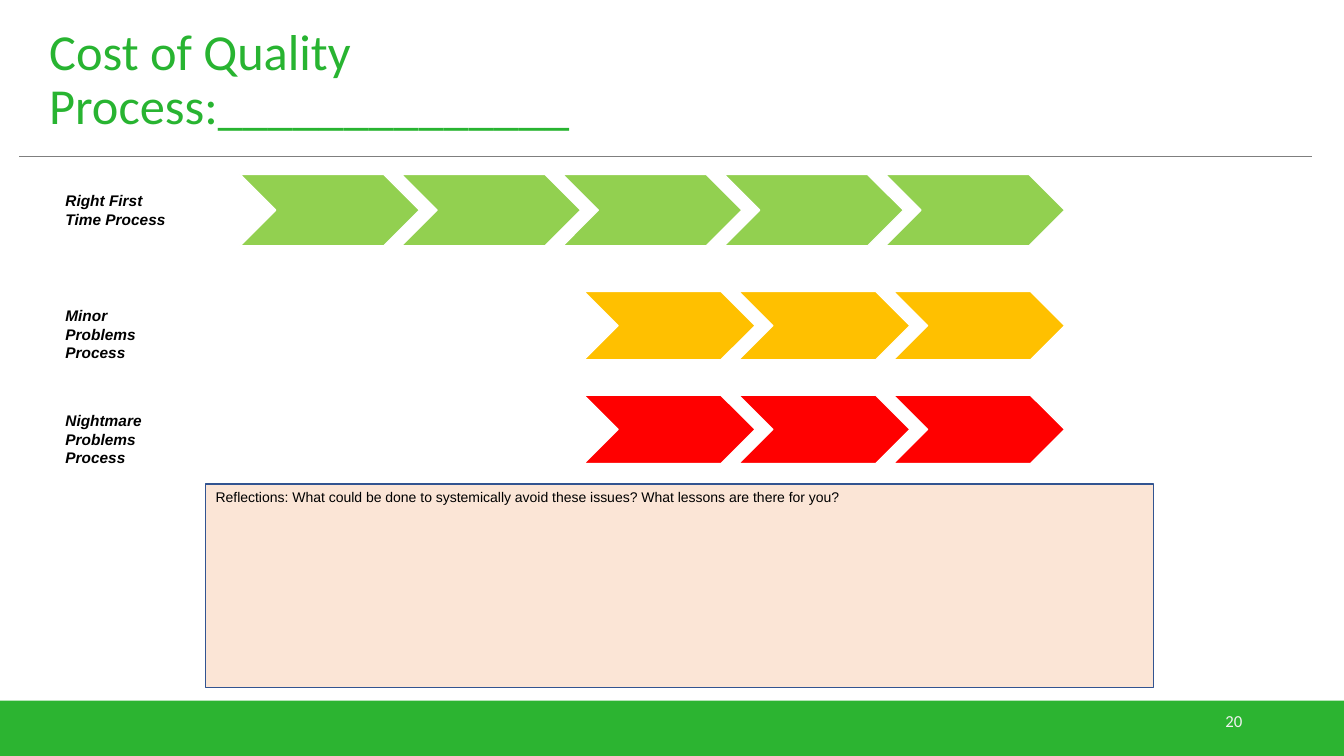
from dataclasses import dataclass
from pptx import Presentation
from pptx.dml.color import RGBColor as Rgb
from pptx.enum.shapes import MSO_CONNECTOR as Link, MSO_SHAPE as Kind
from pptx.enum.text import MSO_ANCHOR as Anchor, PP_ALIGN as Align
from pptx.oxml.ns import qn
from pptx.util import Inches, Pt
from lxml import etree


@dataclass(frozen=True)
class Theme:
    # Colours
    brand: str = "28B431"
    band: str = "2CB431"
    rule: str = "7F7F7F"
    good: str = "92D050"
    minor: str = "FFC000"
    bad: str = "FF0000"
    peach: str = "FBE5D6"
    navy: str = "325491"
    white: str = "FFFFFF"
    pale: str = "F2F2F2"
    black: str = "000000"
    # Fonts and sizes
    head: str = "Calibri"
    body: str = "Arial"
    title: int = 36
    page: int = 12
    label: int = 11
    note: int = 10


class Board:
    def __init__(self, slide, theme):
        self.slide = slide
        self.theme = theme

    def fill_text(self, frame, text, size, color, font, bold=False,
                  align=Align.LEFT, anchor=Anchor.TOP, lead=None):
        frame.word_wrap = True
        frame.vertical_anchor = anchor
        frame.text = text
        for para in frame.paragraphs:
            para.alignment = align
            para.line_spacing = lead
            for run in para.runs:
                face = run.font
                face.name, face.size = font, Pt(size)
                face.bold = face.italic = bold
                face.color.rgb = Rgb.from_string(color)

    def text(self, area, *args, **style):
        box = self.slide.shapes.add_textbox(*map(Inches, area))
        self.fill_text(box.text_frame, *args, **style)

    def shape(self, kind, area, fill, line=None):
        item = self.slide.shapes.add_shape(kind, *map(Inches, area))
        item.shadow.inherit = False
        item.fill.solid()
        item.fill.fore_color.rgb = Rgb.from_string(fill)
        if line:
            item.line.color.rgb = Rgb.from_string(line)
            item.line.width = Pt(1)
        else:
            item.line.fill.background()
        return item

    def rule(self, left, right, top):
        line = self.slide.shapes.add_connector(
            Link.STRAIGHT, *map(Inches, (left, top, right, top)))
        line.line.color.rgb = Rgb.from_string(self.theme.rule)
        line.line.width = Pt(0.75)
        etree.SubElement(line._element.spPr, qn("a:effectLst"))

    def chain(self, count, left, right, top, wide, high, fill):
        step = (right - left - wide) / (count - 1)
        for i in range(count):
            self.shape(Kind.CHEVRON, (left + i * step, top, wide, high),
                       fill, self.theme.white)


def main():
    deck = Presentation()
    deck.slide_width, deck.slide_height = Inches(13.33), Inches(7.5)
    theme = Theme()
    board = Board(deck.slides.add_slide(deck.slide_layouts[6]), theme)

    # Footer band, title and page number
    board.shape(Kind.RECTANGLE, (0, 6.95, 13.33, 0.55), theme.band)
    board.rule(0.19, 13.01, 1.55)
    board.text((0.39, 0.08, 11.5, 1.45),
               "Cost of Quality\vProcess:______________",
               theme.title, theme.brand, theme.head,
               anchor=Anchor.MIDDLE, lead=0.9)
    board.text((9.42, 6.95, 3, 0.4), "20", theme.page, theme.pale,
               theme.head, align=Align.RIGHT, anchor=Anchor.MIDDLE)

    # Process chains
    board.chain(5, 2.38, 10.56, 1.73, 1.78, 0.71, theme.good)
    for top, fill in ((2.89, theme.minor), (3.92, theme.bad)):
        board.chain(3, 5.79, 10.56, top, 1.7, 0.68, fill)

    # Chain labels
    for top, high, text in (
            (1.85, 0.47, "Right First Time Process"),
            (2.99, 0.66, "Minor Problems\nProcess"),
            (4.03, 0.66, "Nightmare Problems\nProcess")):
        board.text((0.55, top, 1.32, high), text, theme.label,
                   theme.black, theme.body, bold=True)

    # Reflections box
    panel = board.shape(Kind.RECTANGLE, (2.04, 4.8, 9.4, 2.02),
                        theme.peach, theme.navy)
    board.fill_text(panel.text_frame,
                    "Reflections: What could be done to systemically avoid "
                    "these issues? What lessons are there for you?",
                    theme.note, theme.black, theme.body)

    deck.save("out.pptx")


if __name__ == "__main__":
    main()
